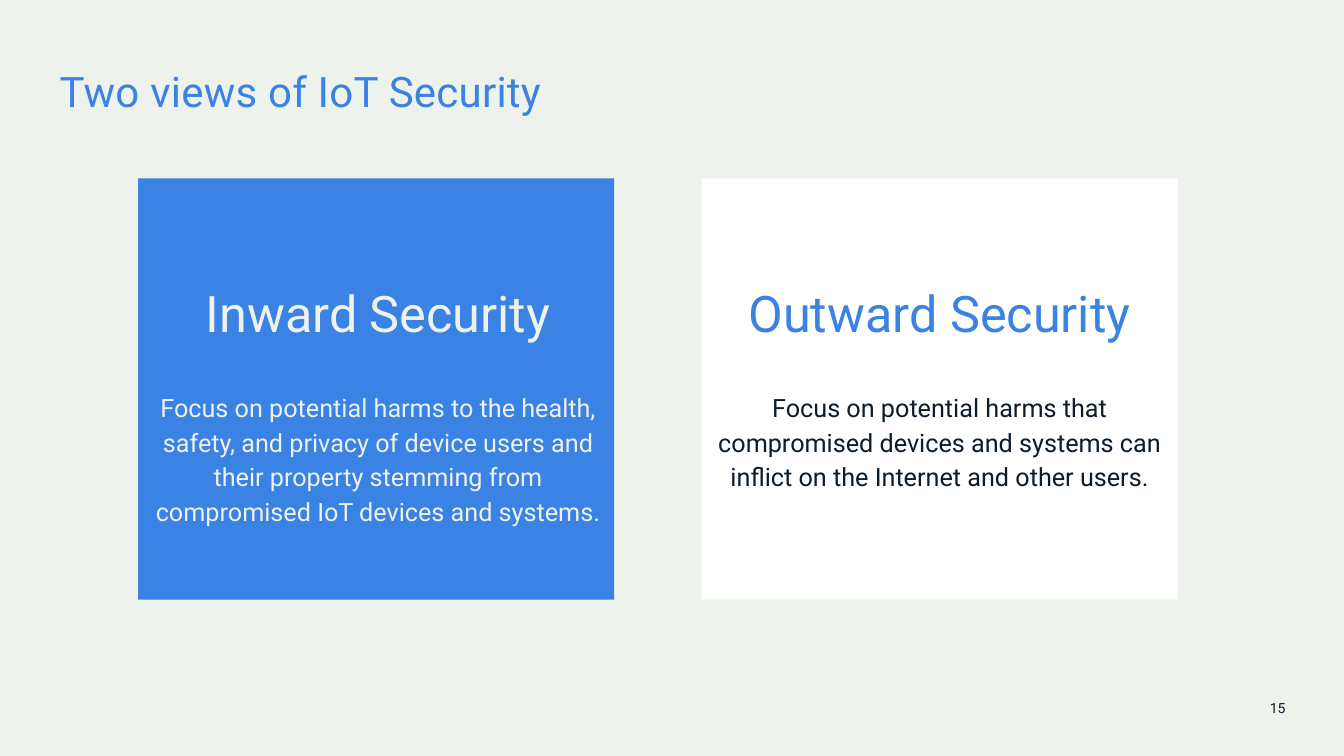
from pptx import Presentation
from pptx.dml.color import RGBColor as RGB
from pptx.enum.shapes import MSO_SHAPE as Shape
from pptx.enum.text import MSO_ANCHOR as Anchor, MSO_AUTO_SIZE as Fit, PP_ALIGN as Align
from pptx.util import Inches, Pt

BLUE, PALE, WHITE, DARK = "3A82E4", "EEF2EC", "FFFFFF", "0C1C2C"
TOP, WIDTH, HEIGHT = 1.77, 4.72, 4.18


def paint(fill, color):
    fill.solid()
    fill.fore_color.rgb = RGB.from_string(color)


def set_up(frame, left=0, top=0, right=0):
    frame.margin_left, frame.margin_top = Inches(left), Inches(top)
    frame.margin_right, frame.margin_bottom = Inches(right), 0
    frame.word_wrap = True
    frame.auto_size = Fit.NONE
    frame.vertical_anchor = Anchor.TOP


def write(para, text, size, color, align=Align.LEFT, line=1.0, after=0, track=0):
    para.alignment, para.line_spacing = align, line
    para.space_before, para.space_after = Pt(0), Pt(after)
    run = para.add_run()
    run.text = text
    run.font.name, run.font.size = "Roboto", Pt(size)
    run.font.color.rgb = RGB.from_string(color)
    if track:
        run.font._element.set("spc", str(round(track * 100)))


def add_title(slide, text):
    title = slide.shapes.title
    title.left, title.top = Inches(0.59), Inches(0.62)
    title.width, title.height = Inches(12.16), Inches(0.67)
    set_up(title.text_frame)
    write(title.text_frame.paragraphs[0], text, 30, BLUE, line=1.06, track=0.2)


def add_card(slide, left, fill, head, head_color, body, body_color, pads):
    card = slide.shapes.add_shape(
        Shape.RECTANGLE, Inches(left), Inches(TOP), Inches(WIDTH), Inches(HEIGHT))
    card.shadow.inherit = False
    card.line.fill.background()
    paint(card.fill, fill)
    frame = card.text_frame
    set_up(frame, pads[0], 0.94, pads[1])
    write(frame.paragraphs[0], head, 36, head_color, Align.CENTER, 1.15, after=32)
    write(frame.add_paragraph(), body, 18, body_color, Align.CENTER, 1.15)


def add_number(slide, text):
    box = slide.shapes.add_textbox(Inches(9.75), Inches(6.94), Inches(3), Inches(0.19))
    set_up(box.text_frame)
    write(box.text_frame.paragraphs[0], text, 10, DARK, Align.RIGHT)


def main():
    deck = Presentation()
    deck.slide_width, deck.slide_height = Inches(13.33), Inches(7.5)
    slide = deck.slides.add_slide(deck.slide_layouts[5])
    paint(slide.background.fill, PALE)
    add_title(slide, "Two views of IoT Security")

    # The two views
    add_card(slide, 6.96, WHITE, "Outward Security", BLUE,
             "Focus on potential harms that compromised devices and systems "
             "can inflict on the Internet and other users.", DARK, (0.04, 0.04))
    add_card(slide, 1.37, BLUE, "Inward Security", PALE,
             "Focus on potential harms to the health, safety, and privacy of "
             "device users and their property stemming from compromised IoT "
             "devices and systems.", PALE, (0.12, 0.08))

    # Page number
    add_number(slide, "15")
    deck.save("out.pptx")


if __name__ == "__main__":
    main()
